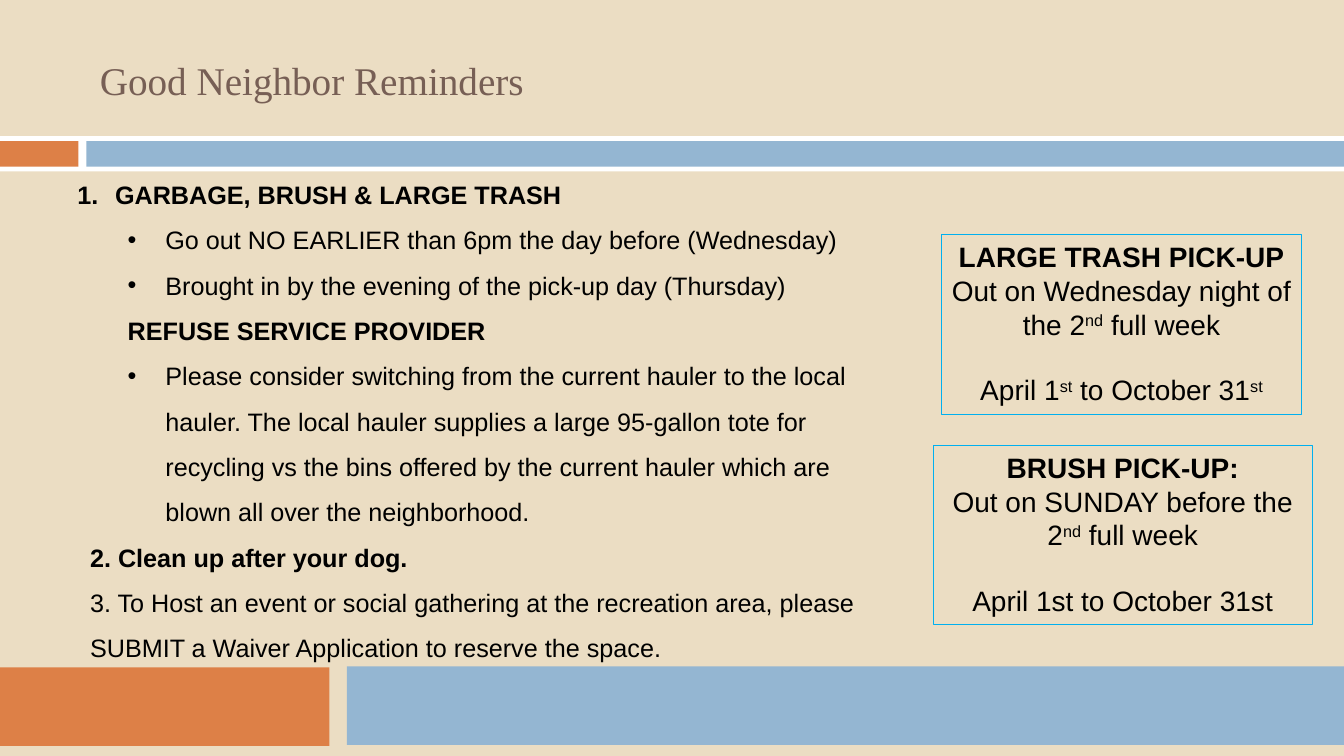
from dataclasses import dataclass

from lxml.etree import SubElement
from pptx import Presentation
from pptx.dml.color import RGBColor
from pptx.enum.shapes import MSO_SHAPE
from pptx.enum.text import MSO_ANCHOR, MSO_AUTO_SIZE, PP_ALIGN
from pptx.oxml.ns import qn
from pptx.util import Cm, Pt

BACKGROUND, WHITE, ORANGE, BLUE = "EBDDC3", "FFFFFF", "DD8047", "94B6D2"
TITLE_COLOR, BLACK, BOX_LINE = "775F55", "000000", "00B0F0"


@dataclass
class Area:
    left: float
    top: float
    width: float
    height: float

    def lengths(self):
        return Cm(self.left), Cm(self.top), Cm(self.width), Cm(self.height)


@dataclass
class Band:
    area: Area
    color: str


@dataclass
class Line:
    text: str
    bold: bool = False
    margin: float = 0
    hanging: float = 0
    bullet: str = ""
    level: int = 0
    space_before: float = 0


@dataclass
class Notice:
    area: Area
    lines: list[Line]


BANDS = [
    Band(Area(0, 3.43, 33.87, 0.89), WHITE),
    Band(Area(0, 3.56, 1.98, 0.64), ORANGE),
    Band(Area(2.18, 3.56, 31.69, 0.64), BLUE),
    Band(Area(0, 16.82, 8.3, 1.98), ORANGE),
    Band(Area(8.74, 16.79, 25.13, 1.98), BLUE),
]

REMINDERS = [
    Line("GARBAGE, BRUSH & LARGE TRASH", True, 0.95, 0.95, "1."),
    Line("Go out NO EARLIER than 6pm the day before (Wednesday)", False, 2.22, 0.95, "•", 1),
    Line("Brought in by the evening of the pick-up day (Thursday)", False, 2.22, 0.95, "•", 1),
    Line("REFUSE SERVICE PROVIDER", True, 1.27, level=1),
    Line(
        "Please consider switching from the current hauler to "
        "the local hauler. The local hauler supplies a large 95-gallon tote for "
        "recycling vs the bins offered by the current hauler which are "
        "blown all over the neighborhood.",
        False, 2.22, 0.95, "•", 1,
    ),
    Line("2. Clean up after your dog.", True, 0.32, level=1),
    Line(
        "3. To Host an event or social gathering at the recreation area, please "
        "SUBMIT a Waiver Application to reserve the space.",
        False, 0.32, level=1,
    ),
]

NOTICES = [
    Notice(Area(23.72, 5.92, 9.09, 4.52), [
        Line("LARGE TRASH PICK-UP", True),
        Line("Out on Wednesday night of the 2^nd^ full week"),
        Line("April 1^st^ to October 31^st^", space_before=23),
    ]),
    Notice(Area(23.52, 11.23, 9.55, 4.52), [
        Line("BRUSH PICK-UP:", True),
        Line("Out on SUNDAY before the 2^nd^ full week"),
        Line("April 1st to October 31st", space_before=23),
    ]),
]


def color(value: str) -> RGBColor:
    return RGBColor.from_string(value)


def style_font(font, name: str, size: float, value: str, bold: bool = False) -> None:
    font.name = name
    font.size = Pt(size)
    font.bold = bold
    font.color.rgb = color(value)


def add_rectangle(slide, area: Area):
    shape = slide.shapes.add_shape(MSO_SHAPE.RECTANGLE, *area.lengths())
    shape.shadow.inherit = False
    return shape


def add_band(slide, band: Band) -> None:
    shape = add_rectangle(slide, band.area)
    shape.fill.solid()
    shape.fill.fore_color.rgb = color(band.color)
    shape.line.fill.background()


def add_bullet(paragraph, line: Line) -> None:
    properties = paragraph._p.get_or_add_pPr()
    properties.set("marL", str(Cm(line.margin)))
    properties.set("indent", str(-Cm(line.hanging)))
    if line.bullet == "1.":
        SubElement(properties, qn("a:buAutoNum"), type="arabicPeriod")
    elif line.bullet:
        SubElement(properties, qn("a:buFont"), typeface="Arial")
        SubElement(properties, qn("a:buChar"), char=line.bullet)
    else:
        SubElement(properties, qn("a:buNone"))


def add_runs(paragraph, text: str) -> None:
    for index, part in enumerate(text.split("^")):
        if part:
            run = paragraph.add_run()
            run.text = part
            if index % 2:
                run._r.get_or_add_rPr().set("baseline", "30000")


def write_lines(frame, lines: list[Line], size: float, spacing: float, alignment) -> None:
    frame.word_wrap = True
    for index, line in enumerate(lines):
        paragraph = frame.add_paragraph() if index else frame.paragraphs[0]
        paragraph.level = line.level
        paragraph.alignment = alignment
        paragraph.line_spacing = spacing
        if line.space_before:
            paragraph.space_before = Pt(line.space_before)
        add_bullet(paragraph, line)
        style_font(paragraph.font, "Arial", size, BLACK, line.bold)
        add_runs(paragraph, line.text)


def add_title(slide, text: str, area: Area) -> None:
    title = slide.shapes.title
    title.left, title.top, title.width, title.height = area.lengths()
    frame = title.text_frame
    frame.text = text
    frame.auto_size = MSO_AUTO_SIZE.NONE
    frame.vertical_anchor = MSO_ANCHOR.MIDDLE
    paragraph = frame.paragraphs[0]
    paragraph.alignment = PP_ALIGN.LEFT
    style_font(paragraph.font, "Times New Roman", 28, TITLE_COLOR)


def add_notice(slide, notice: Notice) -> None:
    shape = add_rectangle(slide, notice.area)
    shape.fill.background()
    shape.line.color.rgb = color(BOX_LINE)
    shape.line.width = Pt(0.75)
    shape.text_frame.vertical_anchor = MSO_ANCHOR.TOP
    write_lines(shape.text_frame, notice.lines, 20, 1.0, PP_ALIGN.CENTER)


def main() -> None:
    presentation = Presentation()
    presentation.slide_width, presentation.slide_height = Cm(33.87), Cm(19.05)
    slide = presentation.slides.add_slide(presentation.slide_layouts[5])
    slide.background.fill.solid()
    slide.background.fill.fore_color.rgb = color(BACKGROUND)
    for band in BANDS:
        add_band(slide, band)
    add_title(slide, "Good Neighbor Reminders", Area(2.26, 0.64, 21.23, 2.74))
    reminders = slide.shapes.add_textbox(*Area(1.7, 4.01, 20.32, 12.8).lengths())
    write_lines(reminders.text_frame, REMINDERS, 18, 1.5, PP_ALIGN.LEFT)
    for notice in NOTICES:
        add_notice(slide, notice)
    presentation.save("out.pptx")


if __name__ == "__main__":
    main()
